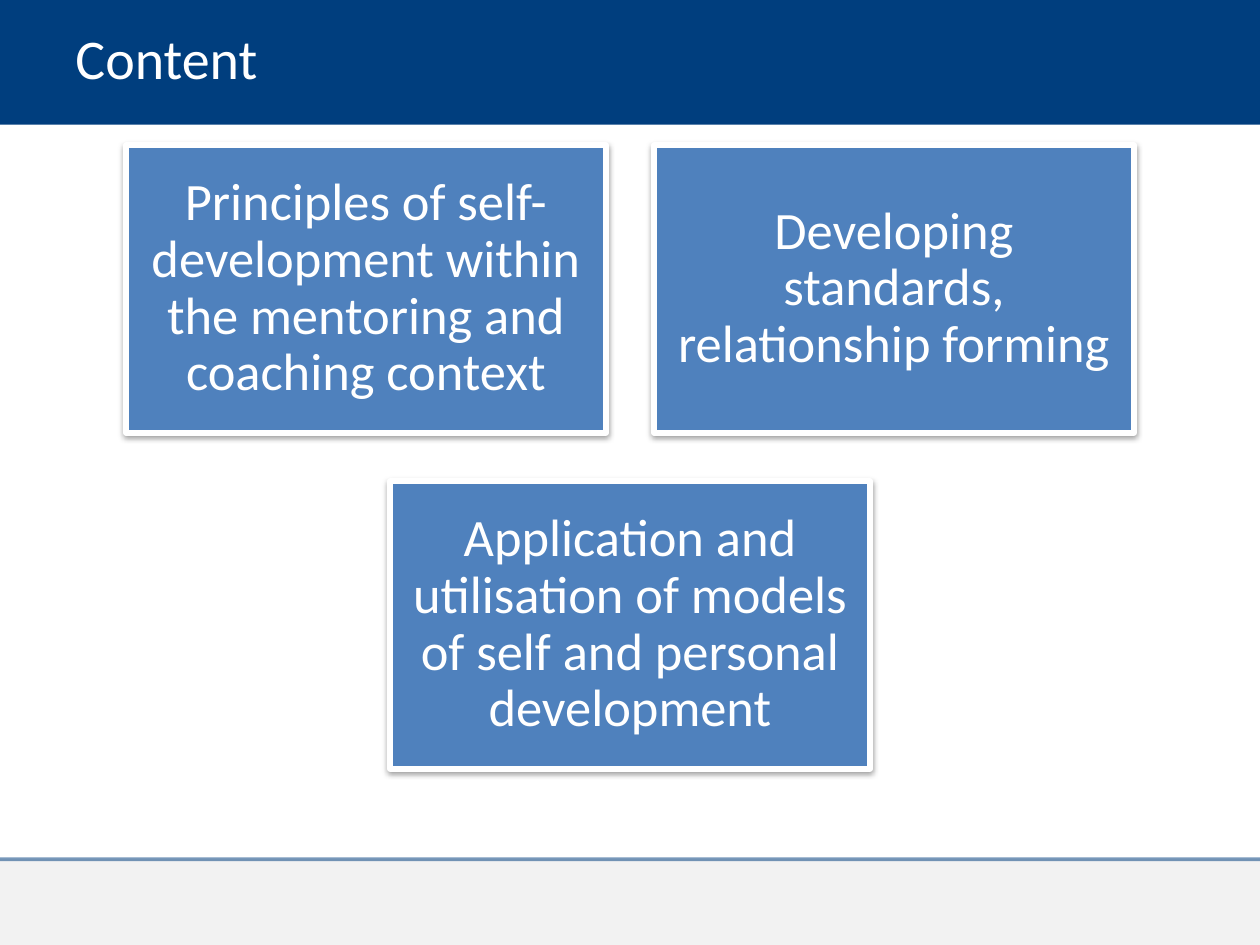
from lxml.etree import SubElement
from pptx import Presentation
from pptx.dml.color import RGBColor
from pptx.enum.shapes import MSO_CONNECTOR, MSO_SHAPE
from pptx.enum.text import MSO_ANCHOR, PP_ALIGN
from pptx.oxml.ns import qn
from pptx.util import Pt

WIDTH, HEIGHT = 720, 540
NAVY, BLUE, GREY, WHITE, BLACK = "003E7E", "4F81BD", "808080", "FFFFFF", "000000"
FOOTER_TOP = 491
CARD_W, CARD_H, CARD_GAP, CARDS_TOP = 274.3, 164.6, 27.4, 82.8
CARD_ROWS = [
    ["Principles of self-development within the mentoring and coaching context",
     "Developing standards, relationship forming"],
    ["Application and utilisation of models of self and personal development"],
]


def rgb(code):
    return RGBColor.from_string(code)


def set_alpha(fill, percent):
    """Make a solid fill let the background through."""
    color = fill._xPr.find(qn("a:solidFill"))[0]
    SubElement(color, qn("a:alpha"), val=str(percent * 1000))


def write(tf, text, size=30, color=WHITE, align=PP_ALIGN.LEFT, inset=None):
    tf.word_wrap = True
    tf.vertical_anchor = MSO_ANCHOR.MIDDLE
    if inset is not None:
        tf.margin_left = tf.margin_right = Pt(inset)
        tf.margin_top = tf.margin_bottom = Pt(inset)
    p = tf.paragraphs[0]
    p.alignment = align
    p.line_spacing = 0.9
    r = p.add_run()
    r.text = text
    r.font.name = "Calibri"
    r.font.size = Pt(size)
    r.font.color.rgb = rgb(color)


class Deck:
    def __init__(self, prs):
        self.font_color = WHITE
        self.s = prs.slides.add_slide(prs.slide_layouts[6])

    def rect(self, x, y, w, h, fill, alpha=None):
        sp = self.s.shapes.add_shape(MSO_SHAPE.RECTANGLE, Pt(x), Pt(y), Pt(w), Pt(h))
        sp.shadow.inherit = False
        sp.fill.solid()
        sp.fill.fore_color.rgb = rgb(fill)
        if alpha is not None:
            set_alpha(sp.fill, alpha)
        sp.line.fill.background()
        return sp

    def rule(self, y, color, width, alpha):
        """Draw a horizontal line across the slide."""
        line = self.s.shapes.add_connector(
            MSO_CONNECTOR.STRAIGHT, Pt(0), Pt(y), Pt(WIDTH), Pt(y))
        line.line.width = Pt(width)
        line.line.color.rgb = rgb(color)
        set_alpha(line.line.fill, alpha)
        SubElement(line._element.spPr, qn("a:effectLst"))

    def title(self, text, x, y, w, h):
        box = self.s.shapes.add_textbox(Pt(x), Pt(y), Pt(w), Pt(h))
        write(box.text_frame, text, size=32, color=self.font_color)

    def card(self, text, x, y):
        sp = self.rect(x, y, CARD_W, CARD_H, BLUE)
        sp.line.color.rgb = rgb(WHITE)
        sp.line.width = Pt(3)
        effects = sp._element.spPr.find(qn("a:effectLst"))
        shadow = SubElement(effects, qn("a:outerShdw"), blurRad=str(Pt(3.15)),
                            dist=str(Pt(1.57)), dir="5400000", rotWithShape="0")
        color = SubElement(shadow, qn("a:srgbClr"), val=BLACK)
        SubElement(color, qn("a:alpha"), val="38000")
        write(sp.text_frame, text, color=self.font_color, align=PP_ALIGN.CENTER, inset=9)

    def card_row(self, texts, y):
        """Place cards side by side, centred on the slide."""
        pitch = CARD_W + CARD_GAP
        left = (WIDTH - len(texts) * pitch + CARD_GAP) / 2
        for i, text in enumerate(texts):
            self.card(text, left + i * pitch, y)


def main():
    prs = Presentation()
    prs.slide_width, prs.slide_height = Pt(WIDTH), Pt(HEIGHT)
    deck = Deck(prs)
    deck.rect(0, 0, WIDTH, 71.3, NAVY)
    deck.rect(0, FOOTER_TOP, WIDTH, HEIGHT - FOOTER_TOP, GREY, alpha=10)
    deck.rule(FOOTER_TOP, NAVY, 2.25, alpha=52)
    deck.title("Content", 36, 10, 500, 50)
    for i, texts in enumerate(CARD_ROWS):
        deck.card_row(texts, CARDS_TOP + i * (CARD_H + CARD_GAP))
    prs.save("out.pptx")


if __name__ == "__main__":
    main()
